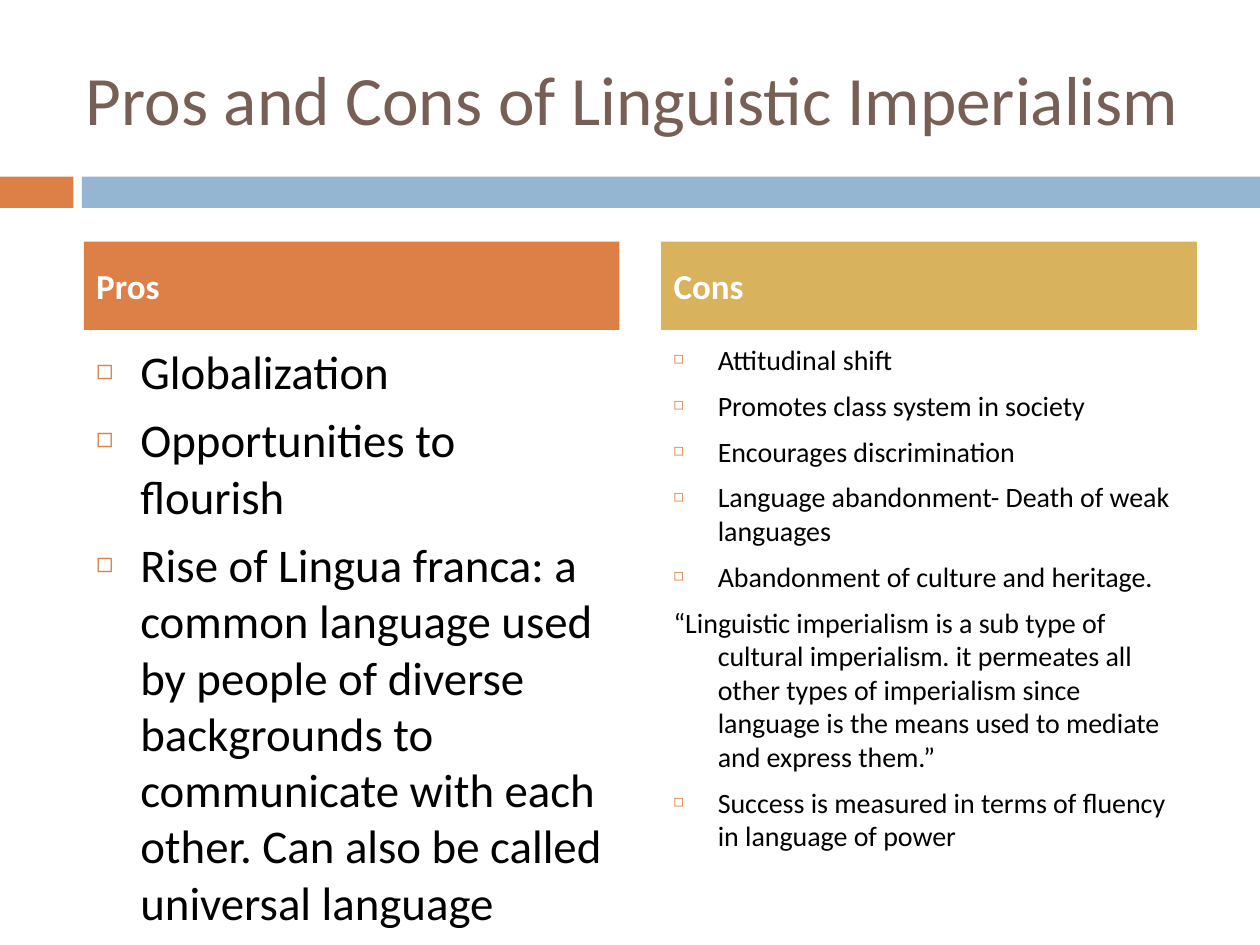
"""Builds the slide on the pros and cons of linguistic imperialism."""
from dataclasses import dataclass

from lxml import etree
from pptx import Presentation
from pptx import util as u
from pptx.dml.color import RGBColor
from pptx.enum import shapes, text
from pptx.oxml.ns import qn


@dataclass(frozen=True)
class Theme:
    font: str = "Calibri"
    orange: str = "DD8047"
    blue: str = "94B6D2"
    gold: str = "D8B25C"
    brown: str = "775F55"
    black: str = "000000"
    white: str = "FFFFFF"
    title_size: float = 39.6
    heading_size: float = 20
    pros_size: float = 26.8
    cons_size: float = 16
    space_before: float = 7


theme = Theme()


def add_block(left, top, width, height, fill=None):
    block = slide.shapes.add_shape(
        shapes.MSO_SHAPE.RECTANGLE, u.Cm(left), u.Cm(top), u.Cm(width), u.Cm(height)
    ) if fill else slide.shapes.add_textbox(
        u.Cm(left), u.Cm(top), u.Cm(width), u.Cm(height)
    )
    if fill:
        block.shadow.inherit = False
        block.fill.solid()
        block.fill.fore_color.rgb = RGBColor.from_string(fill)
        block.line.fill.background()
    block.text_frame.word_wrap = True
    return block.text_frame


def write(paragraph, words, size, color, bold=False):
    paragraph.alignment = text.PP_ALIGN.LEFT
    run = paragraph.add_run()
    run.text = words
    run.font.name = theme.font
    run.font.size = u.Pt(size)
    run.font.bold = bold
    run.font.color.rgb = RGBColor.from_string(color)


deck = Presentation()
deck.slide_width, deck.slide_height = u.Cm(25.4), u.Cm(19.05)
slide = deck.slides.add_slide(deck.slide_layouts[6])

band_top, band_height = 3.56, 0.63
add_block(0, band_top, 1.48, band_height, theme.orange)
add_block(1.65, band_top, 23.75, band_height, theme.blue)

title = add_block(1.48, 0.76, 22.65, 2.42)
title.vertical_anchor = text.MSO_ANCHOR.MIDDLE
write(title.paragraphs[0], "Pros and Cons of Linguistic Imperialism",
      theme.title_size, theme.brown)

pros = [
    "Globalization",
    "Opportunities to flourish",
    "Rise of Lingua franca: a common language used by people of diverse "
    "backgrounds to communicate with each other. Can also be called universal language",
]
cons = [
    "Attitudinal shift",
    "Promotes class system in society",
    "Encourages discrimination",
    "Language abandonment- Death of weak languages",
    "Abandonment of culture and heritage.",
    "“Linguistic imperialism is a sub type of cultural imperialism. it permeates all "
    "other types of imperialism since language is the means used to mediate and "
    "express them.”",
    "Success is measured in terms of fluency in language of power",
]
sides = [
    ("Pros", pros, theme.orange, theme.pros_size),
    ("Cons", cons, theme.gold, theme.cons_size),
]
side_left, side_width, side_step = 1.69, 10.8, 11.64
indent = u.Cm(0.89)

for column, (heading, points, fill, size) in enumerate(sides):
    left = side_left + column * side_step
    header = add_block(left, 4.87, side_width, 1.78, fill)
    header.vertical_anchor = text.MSO_ANCHOR.MIDDLE
    header.paragraphs[0].space_before = u.Pt(theme.space_before)
    write(header.paragraphs[0], heading, theme.heading_size, theme.white, bold=True)

    body = add_block(left, 6.78, side_width, 9.96)
    for index, point in enumerate(points):
        paragraph = body.add_paragraph() if index else body.paragraphs[0]
        paragraph.space_before = u.Pt(theme.space_before)
        write(paragraph, point, size, theme.black)
        layout = paragraph._p.get_or_add_pPr()
        layout.set("marL", str(indent))
        layout.set("indent", str(-indent))
        if point.startswith("“"):
            etree.SubElement(layout, qn("a:buNone"))
            continue
        bullet_color = etree.SubElement(layout, qn("a:buClr"))
        etree.SubElement(bullet_color, qn("a:srgbClr"), val=theme.orange)
        etree.SubElement(layout, qn("a:buSzPct"), val="60000")
        etree.SubElement(layout, qn("a:buFont"), typeface=theme.font)
        etree.SubElement(layout, qn("a:buChar"), char="◻")

deck.save("out.pptx")
